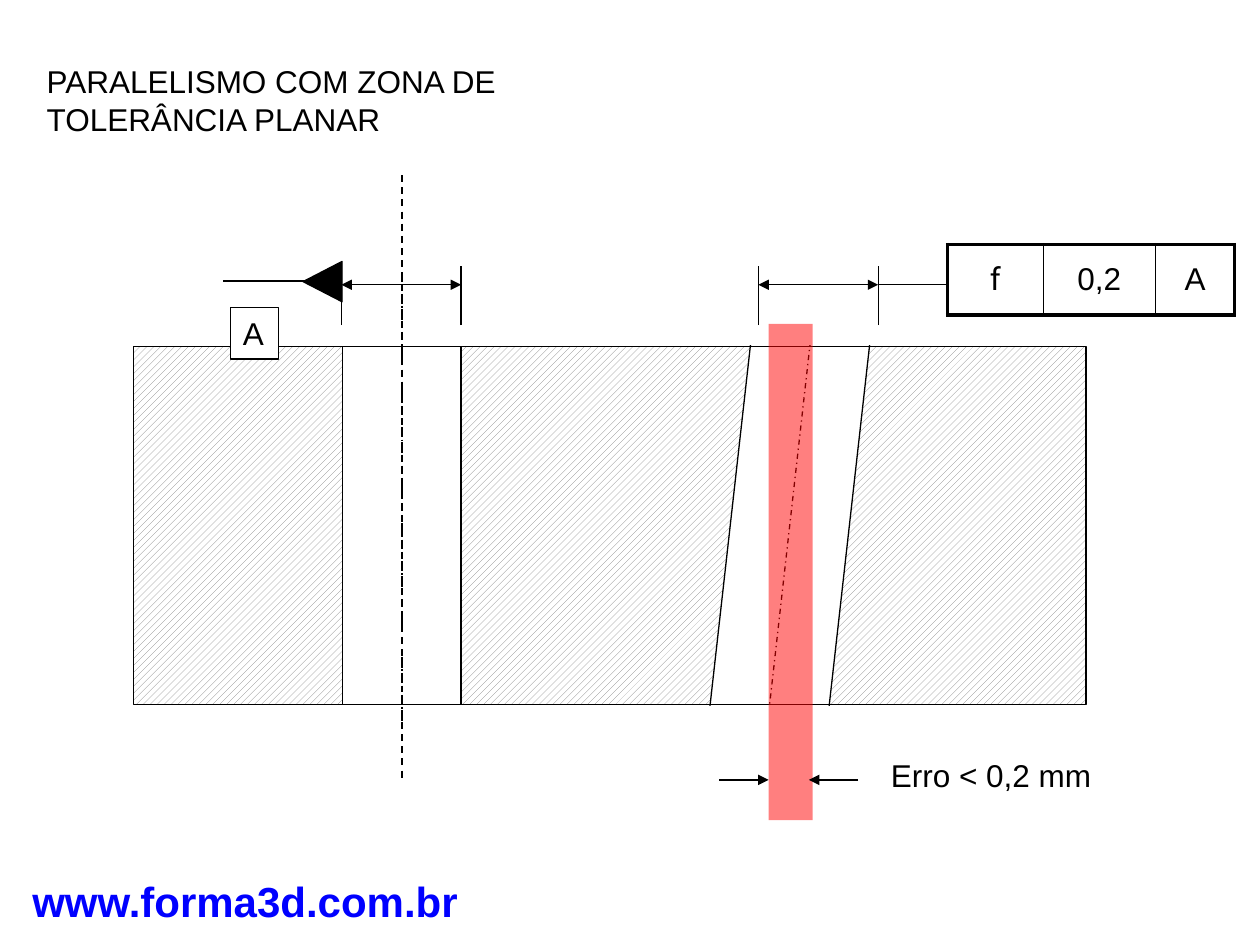
from lxml.etree import SubElement
from pptx import Presentation
from pptx.dml.color import RGBColor
from pptx.enum.dml import MSO_LINE, MSO_PATTERN
from pptx.enum.shapes import MSO_CONNECTOR, MSO_SHAPE
from pptx.enum.text import MSO_ANCHOR, PP_ALIGN
from pptx.oxml import parse_xml
from pptx.oxml.ns import nsdecls, qn
from pptx.util import Inches, Pt

COLORS = {"ink": "000000", "paper": "FFFFFF", "hatch": "808080",
          "zone": "FF0000", "link": "0000FF"}
BLOCK_LEFT, BLOCK_TOP, BLOCK_WIDTH, BLOCK_HEIGHT = 1.06, 2.75, 7.56, 2.84
HOLE_WIDTH = 0.95
DIMENSION_Y = 2.26
ERROR_Y = 6.19


def color(name):
    return RGBColor.from_string(COLORS[name])


def write(frame, text, size=18, name="ink", font="Arial", bold=False,
          align=PP_ALIGN.LEFT, anchor=MSO_ANCHOR.TOP, wrap=False):
    frame.word_wrap = wrap
    frame.vertical_anchor = anchor
    paragraph = frame.paragraphs[0]
    paragraph.alignment = align
    run = paragraph.add_run()
    run.text = text
    run.font.size = Pt(size)
    run.font.name = font
    run.font.bold = bold
    run.font.color.rgb = color(name)


def add_label(slide, box, text, **style):
    label = slide.shapes.add_textbox(*map(Inches, box))
    write(label.text_frame, text, **style)


def add_box(slide, box, fill="paper", line="ink", kind=MSO_SHAPE.RECTANGLE,
            rotation=0):
    shape = slide.shapes.add_shape(kind, *map(Inches, box))
    shape.shadow.inherit = False
    shape.rotation = rotation
    shape.fill.solid()
    shape.fill.fore_color.rgb = color(fill)
    if line:
        shape.line.color.rgb = color(line)
        shape.line.width = Pt(0.75)
    else:
        shape.line.fill.background()
    return shape


def add_line(slide, start, end, width=0.75, dash=None, arrows=()):
    """arrows holds "headEnd" (at start) and/or "tailEnd" (at end)."""
    line = slide.shapes.add_connector(
        MSO_CONNECTOR.STRAIGHT, *map(Inches, (*start, *end)))
    line.line.color.rgb = color("ink")
    line.line.width = Pt(width)
    if dash:
        line.line.dash_style = dash
    for arrow in arrows:
        SubElement(line.line._get_or_add_ln(), qn(f"a:{arrow}"), type="triangle")
    SubElement(line._element.spPr, qn("a:effectLst"))


def add_dimension(slide, left):
    """Two extension lines with a double arrow across a hole."""
    right = left + HOLE_WIDTH
    for x in (left, right):
        add_line(slide, (x, 2.58), (x, 2.11))
    add_line(slide, (left, DIMENSION_Y), (right, DIMENSION_Y),
             arrows=("headEnd", "tailEnd"))


def set_borders(cell, widths):
    properties = cell._tc.get_or_add_tcPr()
    for position, (side, width) in enumerate(zip("LRTB", widths)):
        properties.insert(position, parse_xml(
            f'<a:ln{side} {nsdecls("a")} w="{Pt(width)}"><a:solidFill>'
            f'<a:srgbClr val="{COLORS["ink"]}"/></a:solidFill></a:ln{side}>'))


def add_tolerance_frame(slide):
    entries = [("f", "Roboto", 0.76), ("0,2", "Arial", 0.89), ("A", "Arial", 0.63)]
    last = len(entries) - 1
    table = slide.shapes.add_table(
        1, len(entries), *map(Inches, (7.52, 1.94, 2.28, 0.56))).table
    table.first_row = table.horz_banding = False
    for index, (text, font, width) in enumerate(entries):
        table.columns[index].width = Inches(width)
        cell = table.cell(0, index)
        write(cell.text_frame, text, font=font, align=PP_ALIGN.CENTER, wrap=True)
        cell.vertical_anchor = MSO_ANCHOR.MIDDLE
        cell.fill.solid()
        cell.fill.fore_color.rgb = color("paper")
        set_borders(cell, (2.25 if index == 0 else 1,
                           2.25 if index == last else 1, 2.25, 2.25))


def add_title(slide):
    title = slide.shapes.title
    title.left, title.top, title.width, title.height = map(
        Inches, (0.27, 0.44, 4.73, 0.71))
    write(title.text_frame, "PARALELISMO COM ZONA DE TOLERÂNCIA PLANAR", wrap=True)


def add_block(slide):
    """Hatched section with a straight hole and a tilted one."""
    block = add_box(slide, (BLOCK_LEFT, BLOCK_TOP, BLOCK_WIDTH, BLOCK_HEIGHT))
    block.fill.patterned()
    block.fill.pattern = MSO_PATTERN.WIDE_UPWARD_DIAGONAL
    block.fill.fore_color.rgb = color("hatch")
    block.fill.back_color.rgb = color("paper")
    add_box(slide, (2.72, BLOCK_TOP, 0.94, BLOCK_HEIGHT))

    add_box(slide, (5.8, 2.54, 0.94, 3.23), rotation=6.4)
    add_line(slide, (6.47, 2.37), (6.04, 6.2), dash=MSO_LINE.DASH_DOT)
    # White masks trim the tilted hole at the block's edges.
    bottom = BLOCK_TOP + BLOCK_HEIGHT
    add_box(slide, (5.47, 5.61, 2.05, 1.42), line="paper")
    add_line(slide, (5.24, bottom), (7.28, bottom))
    add_line(slide, (5.63, BLOCK_TOP), (7.13, BLOCK_TOP))
    add_box(slide, (5.63, 2.1, 1.65, 0.63), line="paper")

    add_line(slide, (3.19, 2.18), (3.19, 5.72), width=1, dash=MSO_LINE.DASH_DOT)
    add_line(slide, (3.19, 1.39), (3.19, 6.2), width=1, dash=MSO_LINE.DASH)


def add_error_zone(slide):
    zone = add_box(slide, (6.1, 2.57, 0.35, 3.94), fill="zone", line=None)
    zone_color = zone._element.spPr.find(qn("a:solidFill"))[0]
    SubElement(zone_color, qn("a:alpha"), val="50000")
    for start, end in ((5.71, 6.1), (6.81, 6.42)):
        add_line(slide, (start, ERROR_Y), (end, ERROR_Y), arrows=("tailEnd",))
    add_label(slide, (6.97, 5.95, 1.79, 0.4), "Erro < 0,2 mm",
              align=PP_ALIGN.CENTER)


def add_datum(slide):
    add_line(slide, (2.56, 2.23), (1.77, 2.23), width=1.5)
    add_box(slide, (2.4, 2.08, 0.32, 0.31), fill="ink",
            kind=MSO_SHAPE.ISOSCELES_TRIANGLE, rotation=270)
    letter = add_box(slide, (1.83, 2.44, 0.38, 0.41))
    write(letter.text_frame, "A")


def main():
    presentation = Presentation()
    presentation.slide_width, presentation.slide_height = Inches(10), Inches(7.5)
    slide = presentation.slides.add_slide(presentation.slide_layouts[5])
    add_label(slide, (0.15, 6.9, 3.59, 0.5), "www.forma3d.com.br", size=24,
              name="link", bold=True, align=PP_ALIGN.CENTER)
    add_block(slide)
    add_error_zone(slide)
    add_tolerance_frame(slide)
    for left in (2.71, 6.02):
        add_dimension(slide, left)
    add_line(slide, (6.02 + HOLE_WIDTH, DIMENSION_Y), (7.52, DIMENSION_Y))
    add_datum(slide)
    add_title(slide)
    presentation.save("out.pptx")


if __name__ == "__main__":
    main()
